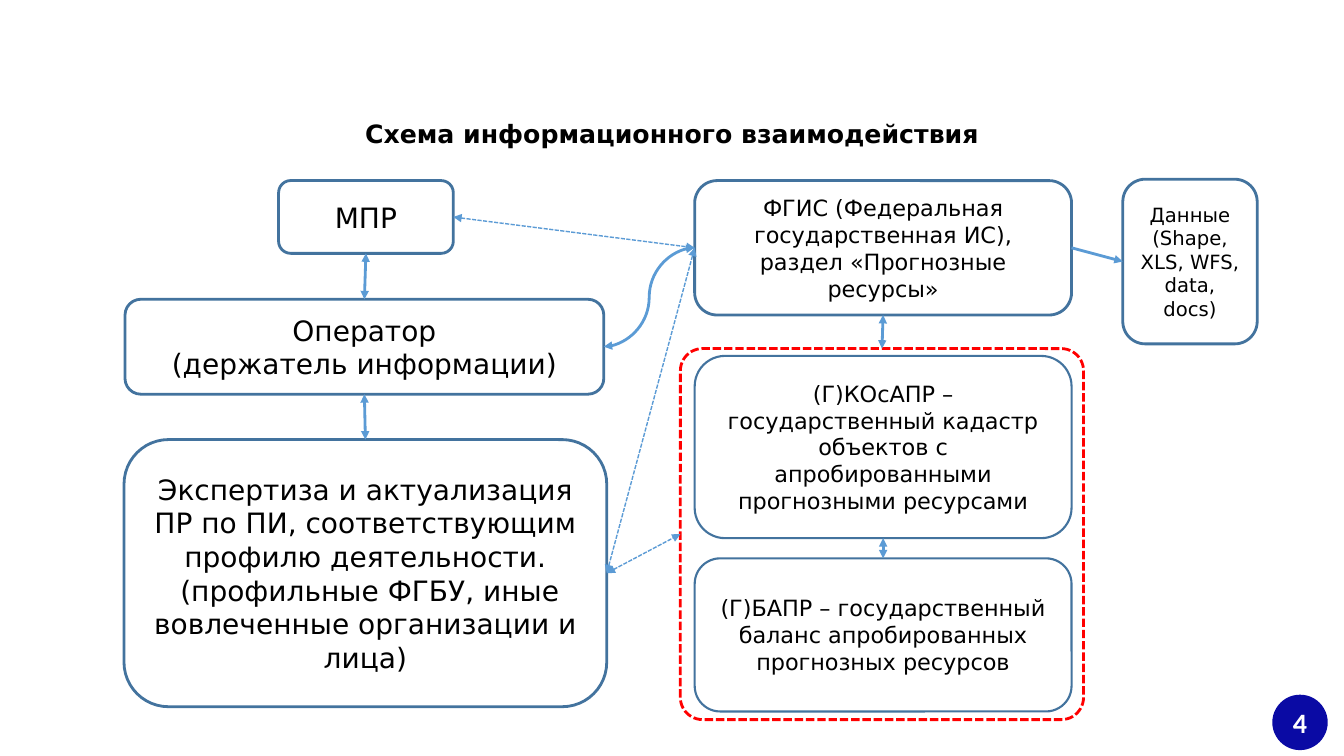
from lxml import etree
from pptx import Presentation
from pptx.dml.color import RGBColor
from pptx.enum.dml import MSO_LINE
from pptx.enum.shapes import MSO_CONNECTOR as LINK, MSO_SHAPE as FORM
from pptx.enum.text import MSO_ANCHOR, MSO_AUTO_SIZE, PP_ALIGN
from pptx.oxml.ns import qn
from pptx.util import Pt

BLACK = RGBColor(0x00, 0x00, 0x00)
WHITE = RGBColor(0xFF, 0xFF, 0xFF)
NAVY = RGBColor(0x0A, 0x0A, 0xA4)
BORDER = RGBColor(0x43, 0x73, 0x9E)
ARROW = RGBColor(0x5B, 0x9B, 0xD5)
RED = RGBColor(0xFF, 0x00, 0x00)

TOP, LEFT, BOTTOM, RIGHT = range(4)  # connection sites of a rounded box
SYSTEM_LEFT, SYSTEM_WIDTH = 496.2, 269.2


def write(holder, text, size, font="DejaVu Sans", color=BLACK, bold=False,
          anchor=MSO_ANCHOR.MIDDLE):
    """Fill a shape with centred text, one paragraph per line."""
    frame = holder.text_frame
    frame.word_wrap = True
    frame.auto_size = MSO_AUTO_SIZE.NONE
    frame.vertical_anchor = anchor
    frame.text = text
    for paragraph in frame.paragraphs:
        paragraph.alignment = PP_ALIGN.CENTER
        paragraph.font.size = Pt(size)
        paragraph.font.name = font
        paragraph.font.bold = bold
        paragraph.font.color.rgb = color


def add_outline(slide, left, top, width, height, color=BORDER, weight=2):
    outline = slide.shapes.add_shape(
        FORM.ROUNDED_RECTANGLE, Pt(left), Pt(top), Pt(width), Pt(height))
    outline.shadow.inherit = False
    outline.fill.background()
    outline.line.color.rgb = color
    outline.line.width = Pt(weight)
    return outline


def add_box(slide, text, size, *place, weight=2):
    box = add_outline(slide, *place, weight=weight)
    write(box, text, size)
    return box


def add_arrow(slide, start, start_site, end, end_site, kind=LINK.STRAIGHT,
              dashed=False, both_ways=True):
    """Join two boxes with an arrow glued to their connection sites."""
    arrow = slide.shapes.add_connector(kind, 0, 0, 0, 0)
    arrow.begin_connect(start, start_site)
    arrow.end_connect(end, end_site)
    arrow.line.color.rgb = ARROW
    arrow.line.width = Pt(1 if dashed else 2)
    if dashed:
        arrow.line.dash_style = MSO_LINE.SQUARE_DOT
    properties = arrow._element.spPr
    stroke = properties.find(qn("a:ln"))
    for tip in ("a:headEnd", "a:tailEnd") if both_ways else ("a:tailEnd",):
        etree.SubElement(stroke, qn(tip), type="triangle")
    etree.SubElement(properties, qn("a:effectLst"))


def add_title(slide, text):
    title = slide.shapes.title
    title.left, title.top, title.width, title.height = 0, Pt(80.6), Pt(960), Pt(29)
    write(title, text, 18, bold=True, anchor=MSO_ANCHOR.TOP)


def add_page_number(slide, number):
    badge = slide.shapes.add_shape(FORM.OVAL, Pt(908.8), Pt(496.2), Pt(39.6), Pt(39.6))
    badge.shadow.inherit = False
    badge.fill.solid()
    badge.fill.fore_color.rgb = NAVY
    badge.line.fill.background()
    frame = badge.text_frame
    frame.margin_left = frame.margin_right = frame.margin_top = frame.margin_bottom = 0
    write(badge, number, 20, font="Calibri", color=WHITE, bold=True)


def add_scheme(slide):
    ministry = add_box(slide, "МПР", 20, 199, 129, 124.8, 52)
    operator = add_box(slide, "Оператор\n(держатель информации)", 20,
                       89.3, 213.8, 342, 67.8)
    experts = add_box(
        slide,
        "Экспертиза и актуализация ПР по ПИ, соответствующим профилю деятельности.\n"
        " (профильные ФГБУ, иные вовлеченные организации и лица)",
        20, 88.6, 314, 344.8, 190.8)
    cadastre = add_box(
        slide,
        "(Г)КOсАПР – государственный кадастр объектов с апробированными "
        "прогнозными ресурсами",
        16, SYSTEM_LEFT, 254.2, SYSTEM_WIDTH, 130.2, weight=1.5)
    balance = add_box(
        slide, "(Г)БАПР – государственный баланс апробированных прогнозных ресурсов",
        16, SYSTEM_LEFT, 398.8, SYSTEM_WIDTH, 109.4, weight=1.5)
    federal = add_box(
        slide, "ФГИС (Федеральная государственная ИС), раздел «Прогнозные ресурсы»",
        16, SYSTEM_LEFT, 129, SYSTEM_WIDTH, 96)
    data = add_box(slide, "Данные\n(Shape, XLS, WFS, data, docs)", 14,
                   802, 128, 96, 117.6)
    registers = add_outline(slide, 486, 249, 288, 265, color=RED)
    registers.adjustments[0] = 0.06
    registers.line.dash_style = MSO_LINE.SQUARE_DOT

    add_arrow(slide, ministry, BOTTOM, operator, TOP)
    add_arrow(slide, operator, BOTTOM, experts, TOP)
    add_arrow(slide, operator, RIGHT, federal, LEFT, kind=LINK.CURVE)
    add_arrow(slide, cadastre, BOTTOM, balance, TOP)
    add_arrow(slide, registers, TOP, federal, BOTTOM)
    add_arrow(slide, experts, RIGHT, registers, LEFT, dashed=True)
    add_arrow(slide, experts, RIGHT, federal, LEFT, dashed=True)
    add_arrow(slide, ministry, RIGHT, federal, LEFT, dashed=True)
    add_arrow(slide, federal, RIGHT, data, LEFT, both_ways=False)


def main():
    deck = Presentation()
    deck.slide_width, deck.slide_height = Pt(960), Pt(540)
    slide = deck.slides.add_slide(deck.slide_layouts.get_by_name("Title Only"))
    add_title(slide, "Схема информационного взаимодействия")
    add_page_number(slide, "4")
    add_scheme(slide)
    deck.save("out.pptx")


if __name__ == "__main__":
    main()
